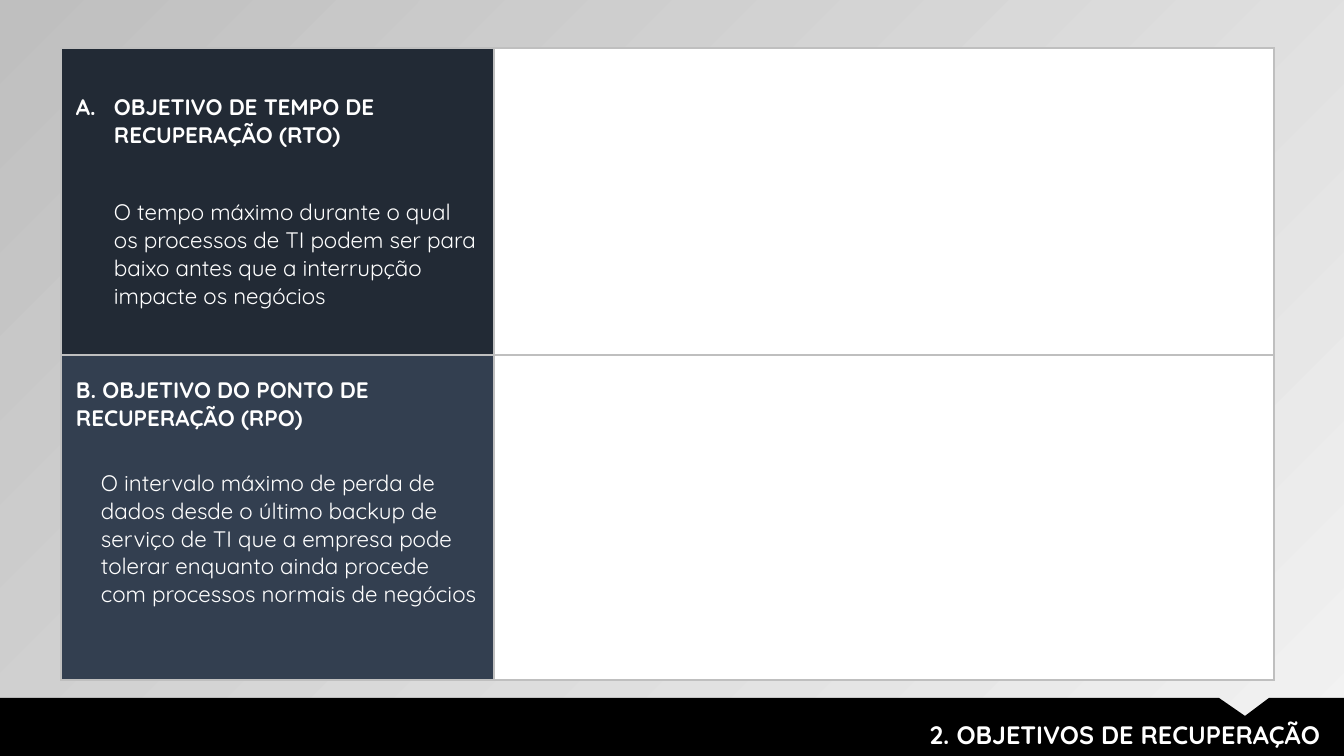
from lxml.etree import SubElement
from pptx import Presentation
from pptx.dml.color import RGBColor
from pptx.enum.text import MSO_ANCHOR, PP_ALIGN
from pptx.oxml import parse_xml
from pptx.oxml.ns import nsdecls, qn
from pptx.util import Pt

SLIDE_SIZE = (1344, 756)
FONT = "Quicksand"
WHITE, BLACK, BORDER = "FFFFFF", "000000", "BFBFBF"
BACKGROUND = ["F2F2F2", "BFBFBF"]

TABLE_LEFT, TABLE_TOP = 61, 48
COLUMN_WIDTHS = [433, 780]
ROW_HEIGHTS = [307, 99, 226]
INSET = 15
HANGING = 38
RTO = ("OBJETIVO DE TEMPO DE RECUPERAÇÃO (RTO)",
       "O tempo máximo durante o qual os processos de TI podem ser para baixo "
       "antes que a interrupção impacte os negócios")
RPO = ("B. OBJETIVO DO PONTO DE RECUPERAÇÃO (RPO)",
       "O intervalo máximo de perda de dados desde o último backup de serviço de TI "
       "que a empresa pode tolerar enquanto ainda procede com processos normais de negócios")
# fill, paragraphs as (text, bold), left inset, anchor, bordered sides
LABEL_CELLS = [
    ("222A35", [(RTO[0], True), (RTO[1], False)], INSET, MSO_ANCHOR.MIDDLE, "LRTB"),
    ("333F50", [(RPO[0], True)], INSET, MSO_ANCHOR.MIDDLE, "LRT"),
    ("333F50", [(RPO[1], False)], 40, MSO_ANCHOR.TOP, "LRB"),
]

FOOTER_TITLE = "2. OBJETIVOS DE RECUPERAÇÃO"
FOOTER_TITLE_BOX = (417, 714, 913, 40)
FOOTER_OUTLINE = [(0, 698), (1219, 698), (1245, 716), (1269, 698),
                  (1344, 698), (1344, 756), (0, 756)]


def px(length):
    return round(length * 914400 / 100.8)


def color(value):
    return RGBColor.from_string(value)


def set_font(paragraph, size, bold):
    paragraph.font.name = FONT
    paragraph.font.size = Pt(size)
    paragraph.font.bold = bold
    paragraph.font.color.rgb = color(WHITE)


def style_cell(cell, fill, sides):
    cell.fill.solid()
    cell.fill.fore_color.rgb = color(fill)
    properties = cell._tc.get_or_add_tcPr()
    for index, side in enumerate("LRTB"):
        paint = (f'<a:solidFill><a:srgbClr val="{BORDER}"/></a:solidFill>'
                 if side in sides else "<a:noFill/>")
        properties.insert(index, parse_xml(
            f'<a:ln{side} w="12700" {nsdecls("a")}>{paint}</a:ln{side}>'))


def fill_label(cell, paragraphs, left, anchor):
    cell.margin_left = px(left)
    cell.margin_right = cell.margin_top = cell.margin_bottom = px(INSET)
    cell.vertical_anchor = anchor
    for index, (text, bold) in enumerate(paragraphs):
        frame = cell.text_frame
        paragraph = frame.add_paragraph() if index else frame.paragraphs[0]
        paragraph.text = text
        set_font(paragraph, 16, bold)


def number_heading(cell):
    """Letter the first paragraph and align the second one under it."""
    heading, body = cell.text_frame.paragraphs
    for paragraph in (heading, body):
        paragraph._p.get_or_add_pPr().set("marL", str(px(HANGING)))
    body.space_before = Pt(35)
    properties = heading._p.get_or_add_pPr()
    properties.set("indent", str(-px(HANGING)))
    bullet = properties.makeelement(qn("a:buFont"), {"typeface": "+mj-lt"})
    properties.insert(0, bullet)
    bullet.addnext(properties.makeelement(qn("a:buAutoNum"), {"type": "alphaUcPeriod"}))


def add_objectives_table(slide):
    frame = slide.shapes.add_table(
        len(ROW_HEIGHTS), len(COLUMN_WIDTHS), px(TABLE_LEFT), px(TABLE_TOP),
        px(sum(COLUMN_WIDTHS)), px(sum(ROW_HEIGHTS)))
    table = frame.table
    table.first_row = table.horz_banding = False
    for column, width in zip(table.columns, COLUMN_WIDTHS):
        column.width = px(width)
    for row, height in zip(table.rows, ROW_HEIGHTS):
        row.height = px(height)
    for index, (fill, paragraphs, left, anchor, sides) in enumerate(LABEL_CELLS):
        label = table.cell(index, 0)
        style_cell(label, fill, sides)
        fill_label(label, paragraphs, left, anchor)
        style_cell(table.cell(index, 1), WHITE, "LRTB")
    number_heading(table.cell(0, 0))
    table.cell(1, 1).merge(table.cell(2, 1))


def add_footer(slide):
    points = [(px(x), px(y)) for x, y in FOOTER_OUTLINE]
    builder = slide.shapes.build_freeform(*points[0])
    builder.add_line_segments(points[1:], close=True)
    band = builder.convert_to_shape()
    band.shadow.inherit = False
    band.fill.solid()
    band.fill.fore_color.rgb = color(BLACK)
    band.line.fill.background()

    frame = slide.shapes.add_textbox(*map(px, FOOTER_TITLE_BOX)).text_frame
    frame.word_wrap = True
    paragraph = frame.paragraphs[0]
    paragraph.text = FOOTER_TITLE
    paragraph.alignment = PP_ALIGN.RIGHT
    set_font(paragraph, 18, True)


def main():
    presentation = Presentation()
    presentation.slide_width, presentation.slide_height = map(px, SLIDE_SIZE)
    slide = presentation.slides.add_slide(presentation.slide_layouts[6])
    fill = slide.background.fill
    fill.gradient()
    fill.gradient_angle = 135
    for stop, value in zip(fill.gradient_stops, BACKGROUND):
        stop.color.rgb = color(value)
    add_objectives_table(slide)
    add_footer(slide)
    presentation.save("out.pptx")


if __name__ == "__main__":
    main()
